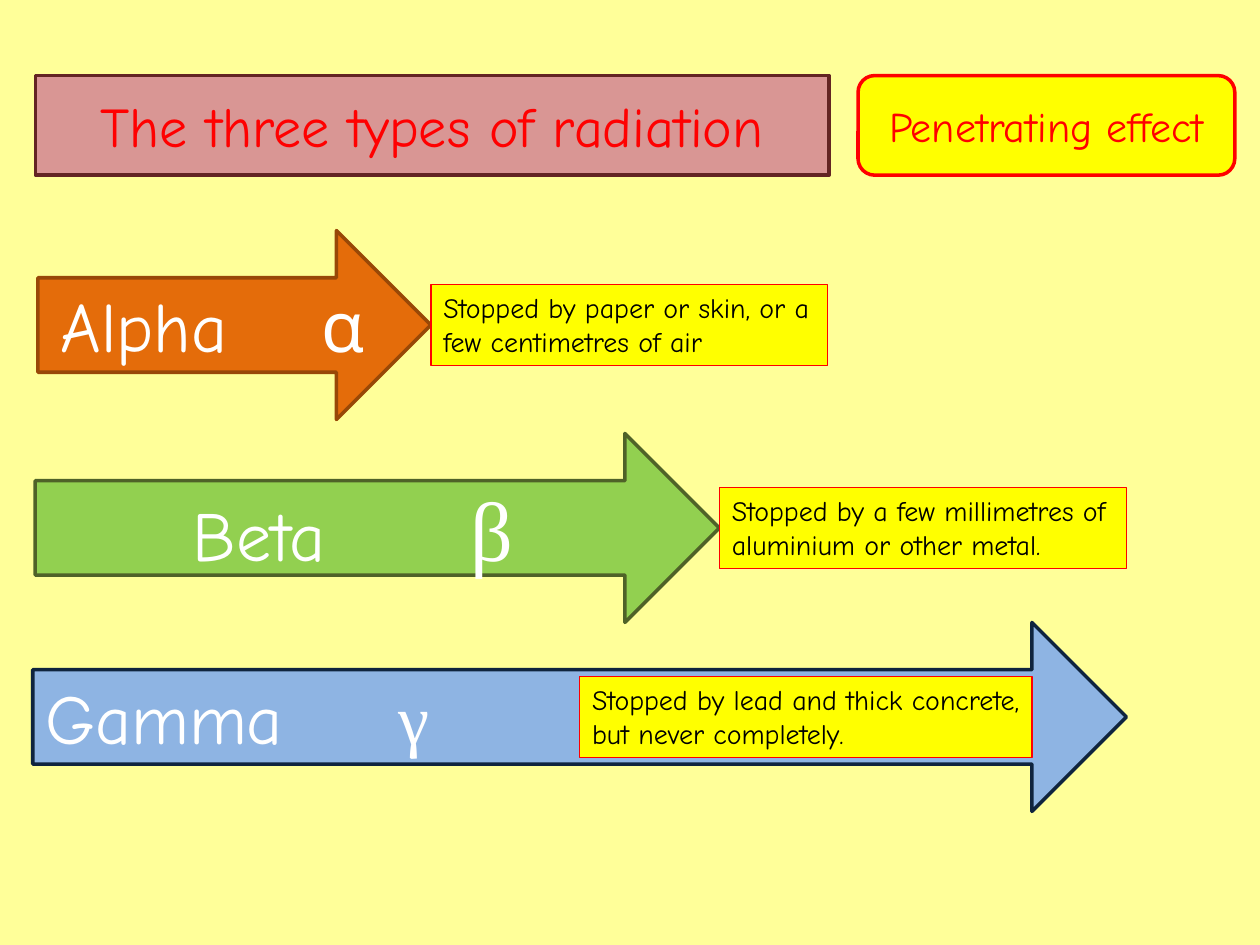
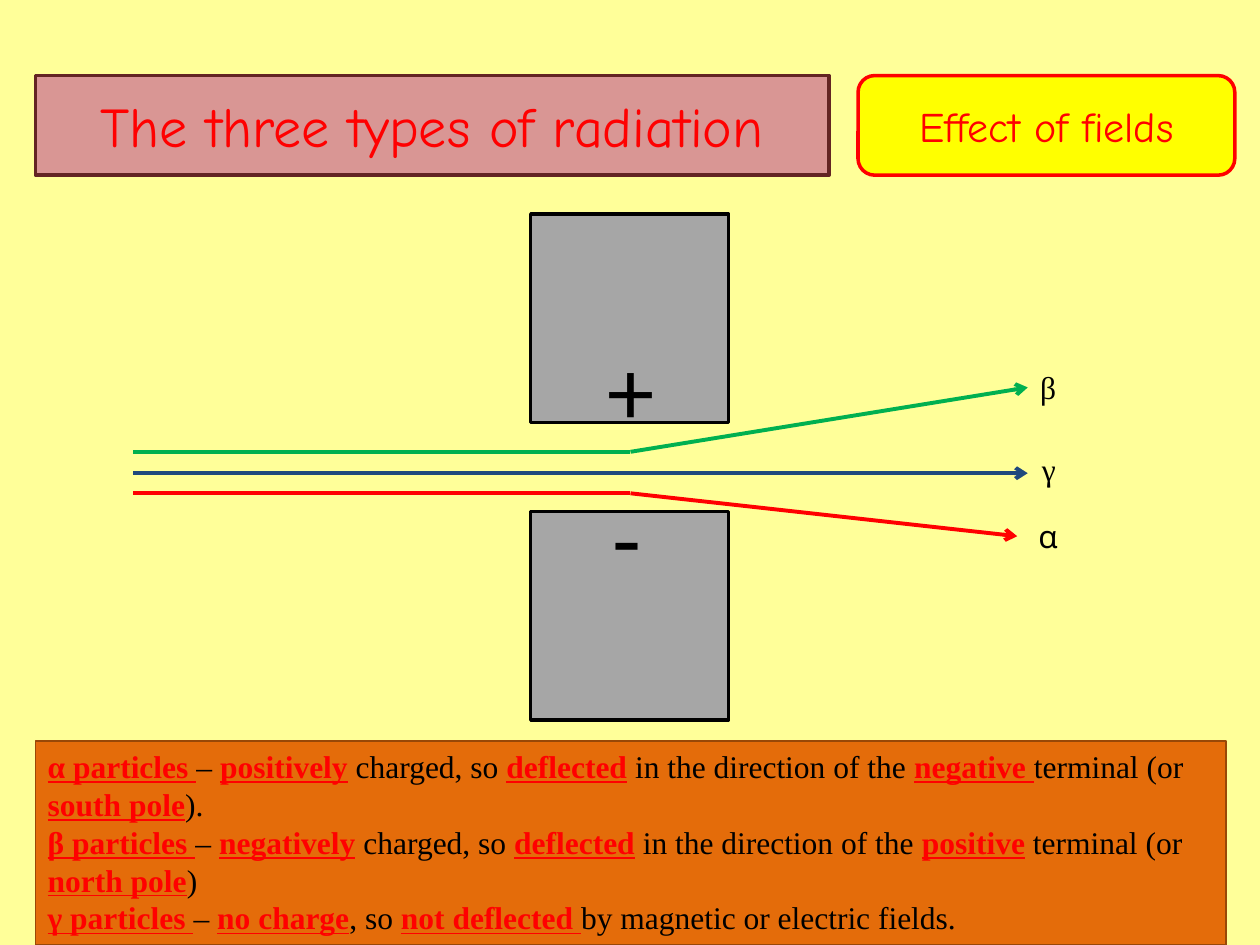
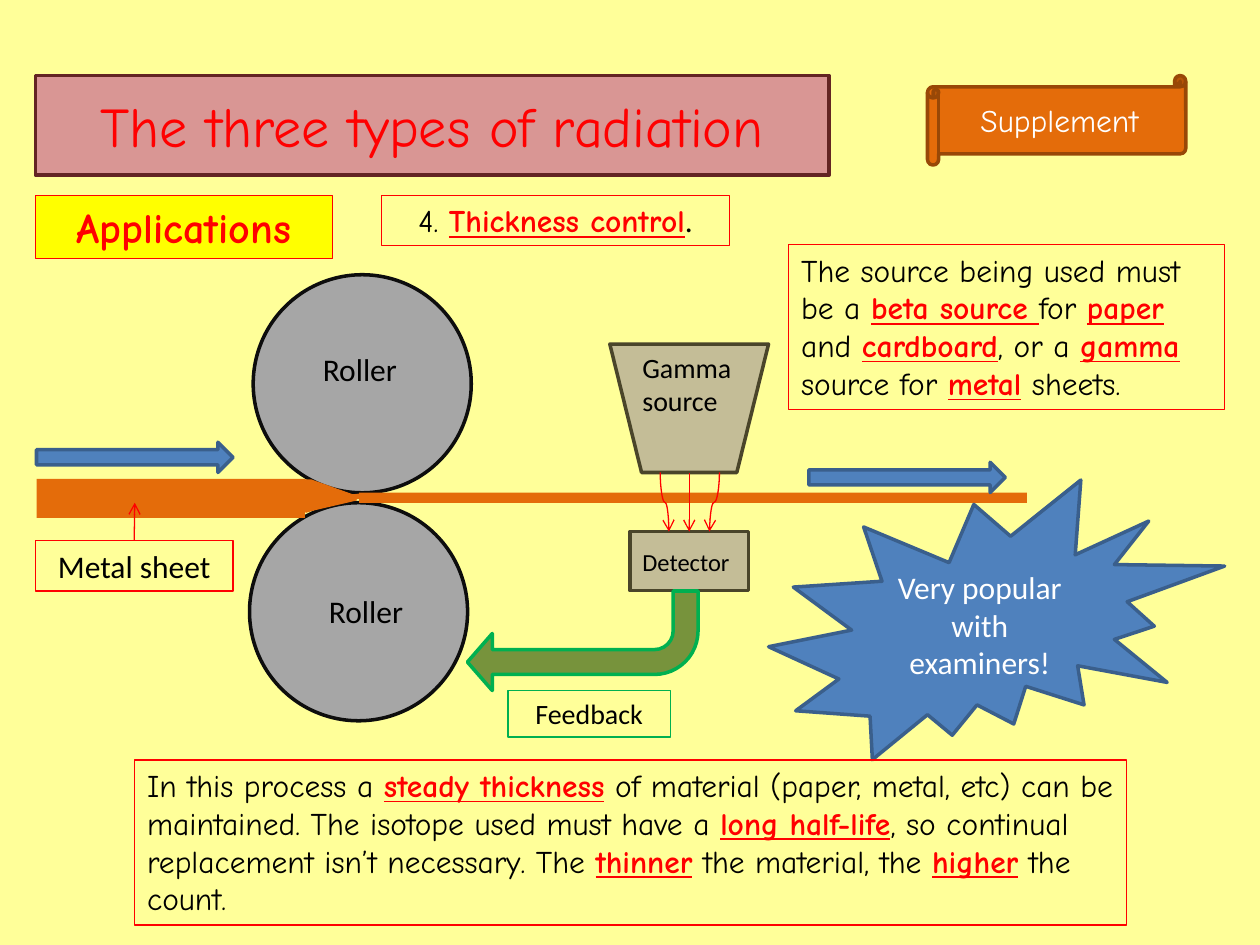
import collections
import pptx
import pptx.dml.color
import pptx.enum.shapes
import pptx.enum.text
import pptx.oxml
import pptx.oxml.ns
import pptx.util

Pt = pptx.util.Pt
RGBColor = pptx.dml.color.RGBColor
SHAPE = pptx.enum.shapes.MSO_SHAPE
CONNECTOR = pptx.enum.shapes.MSO_CONNECTOR
ALIGN = pptx.enum.text.PP_ALIGN
ANCHOR = pptx.enum.text.MSO_ANCHOR
qn = pptx.oxml.ns.qn

Box = collections.namedtuple("Box", "left top width height")

CREAM = RGBColor(0xFF, 0xFF, 0x99)
ROSE = RGBColor(0xD9, 0x96, 0x94)
MAROON = RGBColor(0x63, 0x25, 0x23)
RED = RGBColor(0xFF, 0x00, 0x00)
YELLOW = RGBColor(0xFF, 0xFF, 0x00)
ORANGE = RGBColor(0xE4, 0x6C, 0x0A)
BROWN = RGBColor(0x98, 0x48, 0x07)
LIME = RGBColor(0x92, 0xD0, 0x50)
MOSS = RGBColor(0x4F, 0x62, 0x28)
SKY = RGBColor(0x8E, 0xB4, 0xE3)
NIGHT = RGBColor(0x0F, 0x24, 0x3E)
NAVY = RGBColor(0x1F, 0x49, 0x7D)
BLUE = RGBColor(0x4F, 0x81, 0xBD)
STEEL = RGBColor(0x3A, 0x5F, 0x8C)
GREEN = RGBColor(0x00, 0xB0, 0x50)
OLIVE = RGBColor(0x77, 0x93, 0x3C)
GREY = RGBColor(0xA6, 0xA6, 0xA6)
SOOT = RGBColor(0x0D, 0x0D, 0x0D)
TAN = RGBColor(0xC4, 0xBD, 0x97)
BARK = RGBColor(0x4A, 0x45, 0x2A)
BLACK = RGBColor(0x00, 0x00, 0x00)
WHITE = RGBColor(0xFF, 0xFF, 0xFF)

COMIC = "Comic Neue"
TIMES = "Times New Roman"
CALIBRI = "Calibri"
KEYWORD = {"color": RED, "bold": True, "underline": True}
TITLE_BOX = Box(20.16, 43.2, 453.6, 56.88)
TOPIC_BOX = Box(490.32, 43.2, 215.28, 56.88)


def inside(area, left, top, width, height):
    return Box(area.left + left, area.top + top, width, height)


def marked(text):
    return [(piece, KEYWORD if index % 2 else {})
            for index, piece in enumerate(text.split("*")) if piece]


def paint(shape, fill=None, line=None, weight=2):
    if fill is None:
        shape.fill.background()
    else:
        shape.fill.solid()
        shape.fill.fore_color.rgb = fill
    if line is None:
        shape.line.fill.background()
    else:
        shape.line.color.rgb = line
        shape.line.width = Pt(weight)


def add_shape(page, kind, box, fill=None, line=None, weight=2):
    shape = page.shapes.add_shape(kind, *map(Pt, box))
    shape.shadow.inherit = False
    paint(shape, fill, line, weight)
    return shape


def write(shape, paragraphs, size, name=COMIC, color=BLACK, bold=False,
          align=ALIGN.LEFT, anchor=ANCHOR.TOP, wrap=True):
    frame = shape.text_frame
    frame.word_wrap = wrap
    frame.vertical_anchor = anchor
    base = {"size": size, "name": name, "color": color, "bold": bold, "underline": False}
    for index, spans in enumerate(paragraphs):
        para = frame.paragraphs[0] if index == 0 else frame.add_paragraph()
        para.alignment = align
        for text, changes in spans:
            span = para.add_run()
            span.text = text
            for key, value in {**base, **changes}.items():
                if key == "color":
                    span.font.color.rgb = value
                else:
                    setattr(span.font, key, Pt(value) if key == "size" else value)


def add_label(page, box, text, size, **formats):
    label = page.shapes.add_textbox(*map(Pt, box))
    write(label, [marked(text)], size, **formats)


def add_framed(page, box, texts, size, fill=None, line=RED, **formats):
    framed = add_shape(page, SHAPE.RECTANGLE, box, fill, line, 0.75)
    write(framed, [marked(text) for text in texts], size, **formats)
    return framed


def add_line(page, start, end, color, weight=2.25, arrow=False, kind=CONNECTOR.STRAIGHT):
    line = page.shapes.add_connector(kind, *map(Pt, start + end))
    line.line.color.rgb = color
    line.line.width = Pt(weight)
    if arrow:
        tip = pptx.oxml.parse_xml(
            f'<a:tailEnd {pptx.oxml.ns.nsdecls("a")} type="arrow"/>')
        line.line._get_or_add_ln().append(tip)
    line._element.spPr.append(
        pptx.oxml.parse_xml(f'<a:effectLst {pptx.oxml.ns.nsdecls("a")}/>'))
    return line


def add_falling_curve(page, start, end, color):
    shift, drop = end[0] - start[0], end[1] - start[1]
    middle_x, middle_y = start[0] + shift / 2, start[1] + drop / 2
    curve = add_line(page, (middle_x - drop / 2, middle_y + shift / 2),
                     (middle_x + drop / 2, middle_y - shift / 2),
                     color, 0.75, True, CONNECTOR.CURVE)
    curve._element.spPr.find(qn("a:xfrm")).set("rot", "5400000")


def add_outline(page, area, points, fill):
    corners = [(area.left + x, area.top + y) for x, y in points]
    builder = page.shapes.build_freeform(*corners[0], scale=float(Pt(1)))
    builder.add_line_segments(corners[1:], close=True)
    outline = builder.convert_to_shape()
    outline.shadow.inherit = False
    paint(outline, fill)


def add_page(deck):
    page = deck.slides.add_slide(deck.slide_layouts[5])
    title = page.shapes.title
    for key, value in TITLE_BOX._asdict().items():
        setattr(title, key, Pt(value))
    outline = pptx.oxml.parse_xml(
        f'<a:prstGeom {pptx.oxml.ns.nsdecls("a")} prst="roundRect"><a:avLst/></a:prstGeom>')
    title._element.spPr.find(qn("a:xfrm")).addnext(outline)
    paint(title, ROSE, MAROON)
    title.text_frame.auto_size = pptx.enum.text.MSO_AUTO_SIZE.NONE
    write(title, [marked("The three types of radiation")], 32, color=RED,
          align=ALIGN.CENTER, anchor=ANCHOR.MIDDLE)
    return page


def add_topic(page, box, text):
    topic = add_shape(page, SHAPE.ROUNDED_RECTANGLE, box, YELLOW, RED)
    write(topic, [marked(text)], 24, color=RED, align=ALIGN.CENTER, anchor=ANCHOR.MIDDLE)


def add_tab_stop(shape, position):
    stops = pptx.oxml.parse_xml(
        f'<a:tabLst {pptx.oxml.ns.nsdecls("a")}>'
        f'<a:tab pos="{int(Pt(position))}" algn="l"/></a:tabLst>')
    shape.text_frame.paragraphs[0]._p.get_or_add_pPr().append(stops)


def penetration_arrows(page, area):
    height = 108
    head = height / 2
    rows = [
        (2.88, 0, 224.64, ORANGE, BROWN, "Alpha", "α", {}, 13, 149,
         "Stopped by paper or skin, or a few centimetres of air", 226.8, False),
        (1.44, 115.92, 390.96, LIME, MOSS, "Beta", "β", {"name": TIMES, "size": 48}, 90, 159,
         "Stopped by a few millimetres of aluminium or other metal.", 232.56, False),
        (0, 223.92, 624.96, SKY, NIGHT, "Gamma", "γ", {"name": TIMES}, 7.2, 202,
         "Stopped by lead and thick concrete, but never completely.", 258.48, True),
    ]
    for (left, top, width, fill, line, word, symbol, symbol_format, inset, stop,
         note, note_width, note_within) in rows:
        arrow = add_shape(page, SHAPE.RIGHT_ARROW, inside(area, left, top, width, height),
                          fill, line)
        arrow.text_frame.margin_left = Pt(inset)
        write(arrow, [[(word + "\t", {}), (symbol, symbol_format)]], 40,
              color=WHITE, anchor=ANCHOR.MIDDLE)
        add_tab_stop(arrow, stop)
        note_left = left + width - (head + note_width if note_within else 0)
        add_framed(page, inside(area, note_left, top + 31, note_width, 46.08),
                   [note], 16, YELLOW)


def field_diagram(page, area):
    for top in (0, 170):
        add_shape(page, SHAPE.RECTANGLE, inside(area, 227, top, 113, 119), GREY, BLACK)
    for sign, left, top in (("+", 261.7, 63), ("-", 259.5, 148)):
        add_label(page, inside(area, left, top, 45.4, 72.7), sign, 54,
                  name=CALIBRI, align=ALIGN.CENTER)
    bend = area.left + 284
    particles = [
        ("α", COMIC, RED, 159.5, (505, 184), (510, 169.6)),
        ("γ", TIMES, NAVY, 148, (511, 148), (512, 131.4)),
        ("β", TIMES, GREEN, 135.8, (511, 99), (511, 84.6)),
    ]
    for symbol, name, color, height, tip, label in particles:
        start = (area.left, area.top + height)
        end = (area.left + tip[0], area.top + tip[1])
        if tip[1] != height:
            turn = (bend, start[1])
            add_line(page, start, turn, color)
            start = turn
        add_line(page, start, end, color, arrow=True)
        add_label(page, inside(area, *label, 24.5, 28.8), symbol, 18, name=name, wrap=False)


def thickness_machine(page, area):
    for left, top, label_left, label_top in ((124.7, 0, 150, 39.6), (122.6, 130.3, 153.5, 177.8)):
        add_shape(page, SHAPE.OVAL, inside(area, left, top, 124.6, 124.6), GREY, SOOT)
        add_label(page, inside(area, label_left, label_top, 71.3, 28.8), "Roller", 18,
                  name=CALIBRI, align=ALIGN.CENTER)

    for sheet in ((0.9, 116.6, 153.4, 22.3), (185.2, 124.5, 381.6, 5.8)):
        add_shape(page, SHAPE.RECTANGLE, inside(area, *sheet), ORANGE)
    squeezed = [(153.5, 117.3), (160.7, 118.8), (165.8, 122.4), (177.3, 126), (185.9, 125.2),
                (185.9, 128.1), (173.7, 130.3), (163.6, 133.2), (155, 136)]
    wedge = [(149.9, 117.3), (157.8, 117.3), (183, 126), (183.8, 128.8), (153.5, 136)]
    for points in (squeezed, wedge):
        add_outline(page, area, points, ORANGE)

    source = add_shape(page, SHAPE.FLOWCHART_MANUAL_OPERATION,
                       inside(area, 328.5, 39.6, 90.7, 73.4), TAN, BARK)
    detector = add_shape(page, SHAPE.FLOWCHART_PROCESS,
                         inside(area, 340, 146.8, 67.7, 33.8), TAN, BARK)
    for start, end in ((357.3, 362.3), (391.1, 385.4)):
        add_falling_curve(page, (area.left + start, area.top + 113),
                          (area.left + end, area.top + 146.8), RED)
    ray = add_line(page, (area.left + 373.85, area.top + 113),
                   (area.left + 373.85, area.top + 146.8), RED, 0.75, True)
    ray.begin_connect(source, 2)
    ray.end_connect(detector, 0)
    for text, size, top, height in (("Gamma source", 16, 39.6, 46), ("Detector", 14, 151.9, 24.5)):
        add_label(page, inside(area, 340, top, 67.7, height), text, size, name=CALIBRI)

    for left, top in ((0.9, 95.7), (442.2, 107.2)):
        add_shape(page, SHAPE.RIGHT_ARROW, inside(area, left, top, 112.3, 17.3), BLUE, STEEL)

    centred = {"name": CALIBRI, "align": ALIGN.CENTER}
    tag = add_framed(page, inside(area, 0.2, 151.9, 113, 28.8), ["Metal sheet"], 18, **centred)
    pointer = add_line(page, (area.left + 56.7, area.top + 151.9),
                       (area.left + 57, area.top + 130.3), RED, 0.75, True)
    pointer.begin_connect(tag, 0)

    feedback = add_shape(page, SHAPE.BENT_ARROW, inside(area, 247.1, 180.7, 131.8, 56.9),
                         OLIVE, GREEN)
    feedback.rotation = 180
    for index, value in enumerate((0.25, 0.287, 0.25, 0.438)):
        feedback.adjustments[index] = value
    add_framed(page, inside(area, 270.2, 237.6, 92.9, 26.6), ["Feedback"], 16,
               line=GREEN, **centred)

    burst = add_shape(page, SHAPE.EXPLOSION2, inside(area, 419.2, 117.3, 260.6, 159.8),
                      BLUE, STEEL)
    write(burst, [marked("Very popular with examiners!")], 18, color=WHITE,
          anchor=ANCHOR.MIDDLE, **centred)


def penetration_page(deck):
    page = add_page(deck)
    add_topic(page, TOPIC_BOX, "Penetrating effect")
    penetration_arrows(page, Box(18.72, 131.76, 625, 332))


def fields_page(deck):
    page = add_page(deck)
    add_topic(page, TOPIC_BOX, "Effect of fields")
    field_diagram(page, Box(76.3, 122.4, 540, 289))
    add_framed(page, Box(20.16, 423.4, 680.4, 116.6), [
        "*α particles *– *positively* charged, so *deflected* in the direction of the "
        "*negative *terminal (or *south pole*).",
        "*β particles *– *negatively* charged, so *deflected* in the direction of the "
        "*positive* terminal (or *north pole*)",
        "*γ particles *– *no charge*, so *not deflected *by magnetic or electric fields.",
    ], 18, ORANGE, BROWN, name=TIMES)


def thickness_page(deck):
    page = add_page(deck)
    scroll = add_shape(page, SHAPE.HORIZONTAL_SCROLL, Box(530, 43.2, 147.6, 51.1), ORANGE, BROWN)
    write(scroll, [marked("Supplement")], 18, color=WHITE,
          align=ALIGN.CENTER, anchor=ANCHOR.MIDDLE)
    add_framed(page, Box(20.16, 111.6, 169.92, 36), ["Applications"], 24, YELLOW,
               color=RED, bold=True, align=ALIGN.CENTER)
    thickness_machine(page, Box(20, 157, 680, 277))
    add_framed(page, Box(77, 434.2, 566.6, 94.3), [
        "In this process a *steady thickness* of material (paper, metal, etc) can be maintained. "
        "The isotope used must have a *long half-life*, so continual replacement isn’t "
        "necessary. The *thinner* the material, the *higher* the count."], 18)
    add_framed(page, Box(450.7, 139.7, 249.1, 94.3), [
        "The source being used must be a *beta source *for *paper* and *cardboard*, "
        "or a *gamma* source for *metal* sheets."], 18)
    heading = add_shape(page, SHAPE.RECTANGLE, Box(218.16, 111.6, 198.72, 28.8), None, RED, 0.75)
    write(heading, [[("4. ", {}), ("Thickness control", KEYWORD), (".", {"name": CALIBRI})]],
          18, align=ALIGN.CENTER)


def main():
    deck = pptx.Presentation()
    deck.slide_width = Pt(720)
    deck.slide_height = Pt(540)
    backdrop = deck.slide_master.background.fill
    backdrop.solid()
    backdrop.fore_color.rgb = CREAM
    penetration_page(deck)
    fields_page(deck)
    thickness_page(deck)
    deck.save("out.pptx")


if __name__ == "__main__":
    main()
